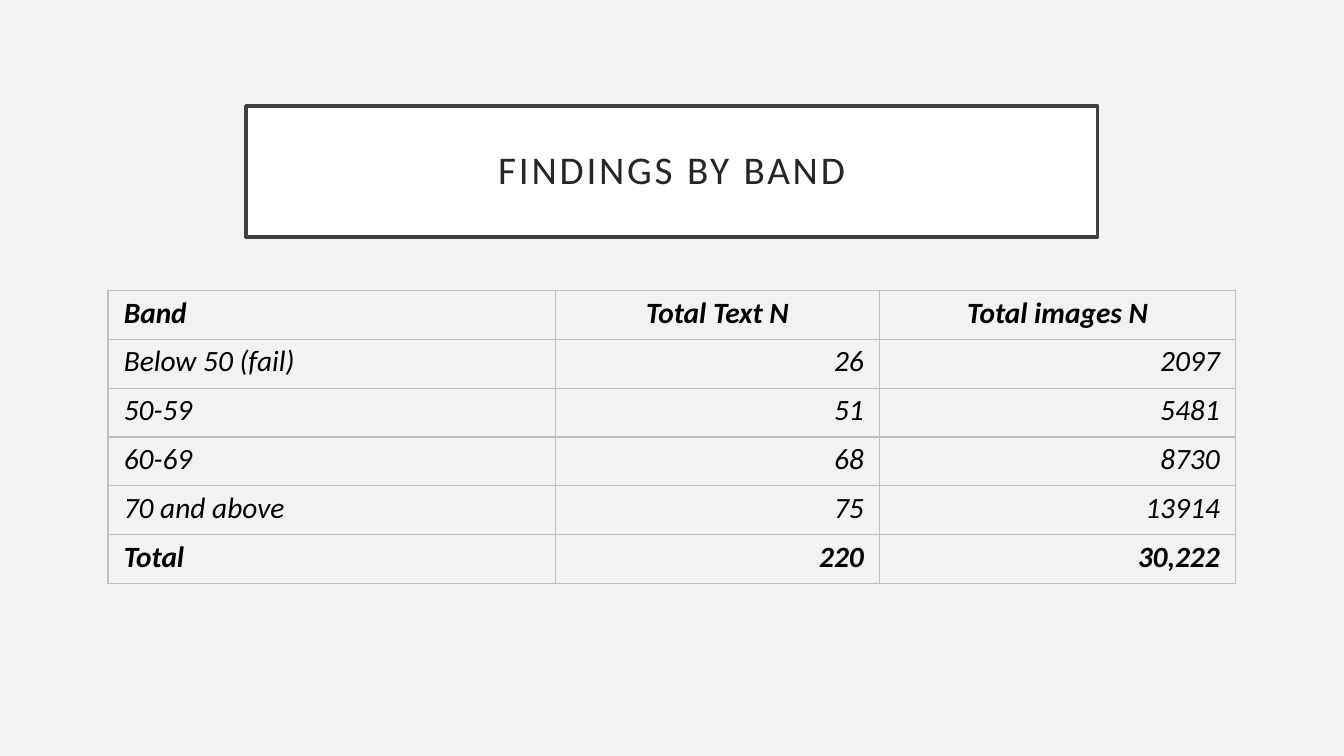
"""Build the slide of findings by band: a framed title above a table of totals."""
from lxml import etree
from pptx import Presentation
from pptx.dml.color import RGBColor
from pptx.enum.text import MSO_ANCHOR, PP_ALIGN
from pptx.oxml.ns import qn
from pptx.util import Cm, Pt

LEFT, CENTER, RIGHT = PP_ALIGN.LEFT, PP_ALIGN.CENTER, PP_ALIGN.RIGHT
TOP, MIDDLE = MSO_ANCHOR.TOP, MSO_ANCHOR.MIDDLE

TITLE = "FINDINGS BY BAND"
ROWS = [
    ("Band", "Total Text N", "Total images N"),
    ("Below 50 (fail)", "26", "2097"),
    ("50-59", "51", "5481"),
    ("60-69", "68", "8730"),
    ("70 and above", "75", "13914"),
    ("Total", "220", "30,222"),
]
COLORS = {"page": "F2F2F2", "title_fill": "FFFFFF", "frame": "404040",
          "title": "262626", "text": "000000", "grid": "BFBFBF"}
FONT = "Calibri"
TITLE_PLACE = {"left": Cm(6.2), "top": Cm(2.67), "width": Cm(21.46), "height": Cm(3.3)}
TITLE_FRAME = {"margin_left": Cm(0.5), "margin_right": Cm(0.5), "margin_top": Cm(0.5),
               "margin_bottom": Cm(0.5), "vertical_anchor": MIDDLE, "word_wrap": True}
CELL_FORMAT = {"margin_left": Cm(0.4), "margin_right": Cm(0.4), "margin_top": Cm(0.05),
               "margin_bottom": Cm(0), "vertical_anchor": TOP}
TABLE_LEFT, TABLE_TOP, ROW_HEIGHT = 2.72, 7.32, 1.23
COLUMN_WIDTHS = [11.27, 8.18, 8.97]
BORDER_SIDES = ("a:lnL", "a:lnR", "a:lnT", "a:lnB")


def color(name):
    return RGBColor.from_string(COLORS[name])


def apply(target, values):
    for name, value in values.items():
        setattr(target, name, value)


def write(para, text, align, spacing, color_name, **font_values):
    apply(para, {"alignment": align, "line_spacing": spacing,
                 "space_before": Pt(0), "space_after": Pt(0)})
    span = para.add_run()
    span.text = text
    apply(span.font, {"name": FONT, **font_values})
    span.font.color.rgb = color(color_name)
    return span


def add_borders(cell):
    properties = cell._tc.get_or_add_tcPr()
    for position, side in enumerate(BORDER_SIDES):
        line = etree.Element(qn(side), w=str(Pt(1)))
        fill = etree.SubElement(line, qn("a:solidFill"))
        etree.SubElement(fill, qn("a:srgbClr"), val=COLORS["grid"])
        properties.insert(position, line)


def add_title(page):
    box = page.shapes.title
    apply(box, TITLE_PLACE)
    box.fill.solid()
    box.fill.fore_color.rgb = color("title_fill")
    box.line.color.rgb = color("frame")
    box.line.width = Pt(2.5)
    apply(box.text_frame, TITLE_FRAME)
    span = write(box.text_frame.paragraphs[0], TITLE, CENTER, 0.9, "title", size=Pt(28))
    span.font._element.set("spc", "200")


def add_findings(page):
    table = page.shapes.add_table(
        len(ROWS), len(COLUMN_WIDTHS), Cm(TABLE_LEFT), Cm(TABLE_TOP),
        Cm(sum(COLUMN_WIDTHS)), Cm(ROW_HEIGHT * len(ROWS))).table
    apply(table, {"first_row": False, "horz_banding": False})
    for column, width in zip(table.columns, COLUMN_WIDTHS):
        column.width = Cm(width)
    last = len(ROWS) - 1
    for r, values in enumerate(ROWS):
        table.rows[r].height = Cm(ROW_HEIGHT)
        for c, text in enumerate(values):
            cell = table.cell(r, c)
            apply(cell, CELL_FORMAT)
            cell.fill.background()
            add_borders(cell)
            align = LEFT if c == 0 else CENTER if r == 0 else RIGHT
            write(cell.text_frame.paragraphs[0], text, align, 1.07, "text",
                  size=Pt(21), bold=r in (0, last), italic=True)


def main():
    deck = Presentation()
    apply(deck, {"slide_width": Cm(33.87), "slide_height": Cm(19.05)})
    page = deck.slides.add_slide(deck.slide_layouts[5])
    page.background.fill.solid()
    page.background.fill.fore_color.rgb = color("page")
    add_title(page)
    add_findings(page)
    deck.save("out.pptx")


if __name__ == "__main__":
    main()
